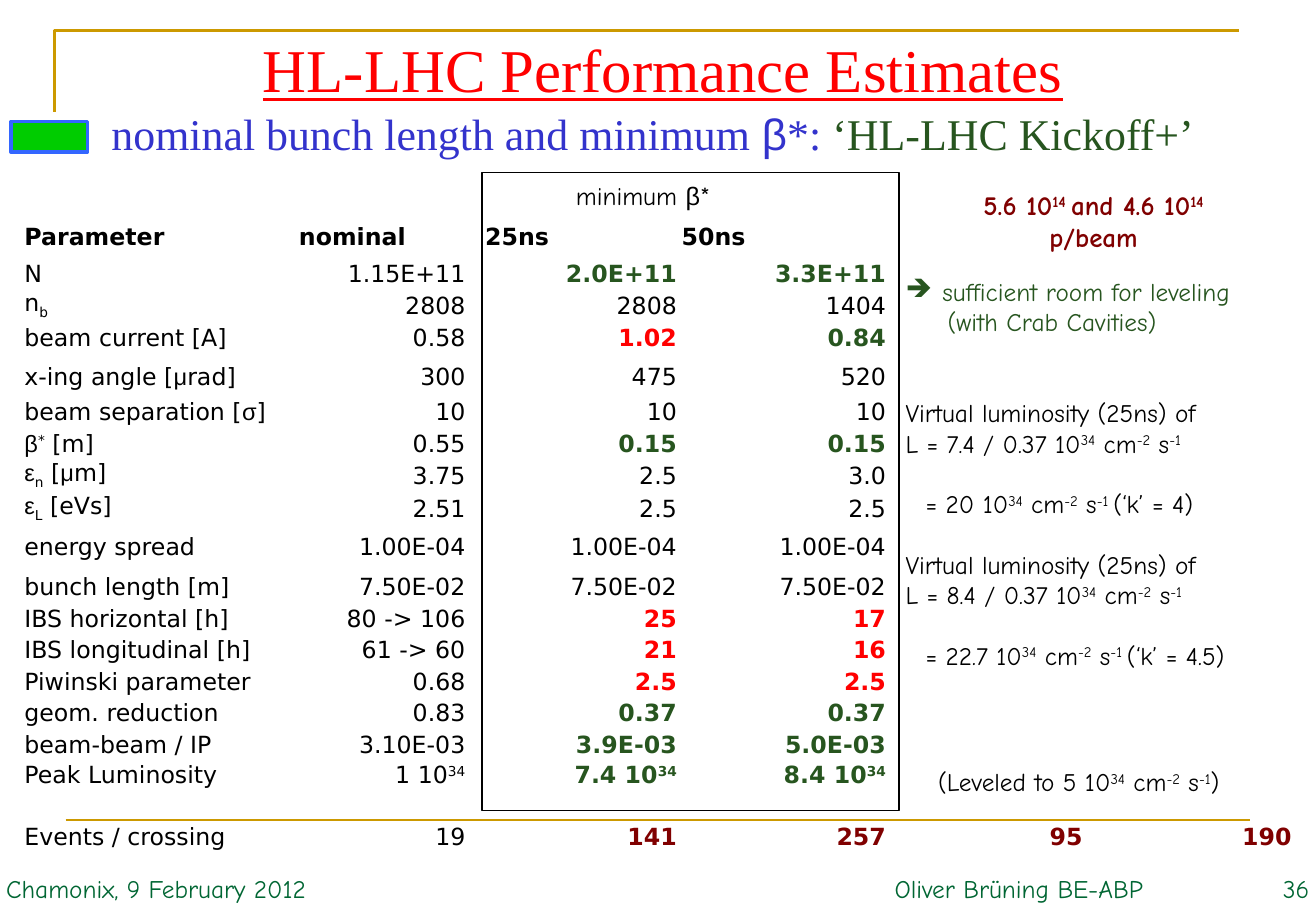
from itertools import groupby

from lxml import etree
from pptx import Presentation
from pptx.dml.color import RGBColor
from pptx.enum.shapes import MSO_CONNECTOR, MSO_SHAPE
from pptx.enum.text import MSO_ANCHOR, PP_ALIGN
from pptx.oxml.ns import qn
from pptx.util import Cm, Pt

LEFT, CENTER, RIGHT = PP_ALIGN.LEFT, PP_ALIGN.CENTER, PP_ALIGN.RIGHT
MIDDLE, BOTTOM = MSO_ANCHOR.MIDDLE, MSO_ANCHOR.BOTTOM
RECTANGLE, STRAIGHT = MSO_SHAPE.RECTANGLE, MSO_CONNECTOR.STRAIGHT

COLOURS = {
    "black": "000000", "red": "FF0000", "green": "27551F", "maroon": "800000",
    "gold": "CC9900", "blue": "3333CC", "footer": "006633",
    "marker": "00CC00", "marker edge": "3366FF",
}
SERIF, HAND, TABLE_FONT, GREEK_FONT = "Times New Roman", "Comic Neue", "DejaVu Sans", "Arial"
GREEK = "βεμσ"
BASELINES = {"^": "30000", "_": "-25000"}
NO_STYLE_NO_GRID = "{2D5ABB26-0587-4C30-8999-92F81FD0307C}"

TABLE_LEFT = 0.46
COLUMNS = [5.74, 3.58, 4.42, 4.37, 4.11, 4.37]
HEADER = ["Parameter", "nominal", "25ns", "50ns"]
BLACK, RED, GREEN = ["black"] * 4, ["black"] * 2 + ["red"] * 2, ["black"] * 2 + ["green"] * 2
# Row height, cell colours, cell texts
PARAMETERS = [
    (0.76, GREEN, ["N", "1.15E+11", "2.0E+11", "3.3E+11"]),
    (0.66, BLACK, ["n|_b", "2808", "2808", "1404"]),
    (0.66, ["black", "black", "red", "green"], ["beam current [A]", "0.58", "1.02", "0.84"]),
    (0.81, BLACK, ["x-ing angle [μrad]", "300", "475", "520"]),
    (0.74, BLACK, ["beam separation [σ]", "10", "10", "10"]),
    (0.66, GREEN, ["β|^*| [m]", "0.55", "0.15", "0.15"]),
    (0.66, BLACK, ["ε|_n| [μm]", "3.75", "2.5", "3.0"]),
    (0.66, BLACK, ["ε|_L| [eVs]", "2.51", "2.5", "2.5"]),
    (0.79, BLACK, ["energy spread"] + ["1.00E-04"] * 3),
    (0.84, BLACK, ["bunch length [m]"] + ["7.50E-02"] * 3),
    (0.66, RED, ["IBS horizontal [h]", "80 -> 106", "25", "17"]),
    (0.66, RED, ["IBS longitudinal [h]", "61 -> 60", "21", "16"]),
    (0.66, RED, ["Piwinski parameter", "0.68", "2.5", "2.5"]),
    (0.66, GREEN, ["geom. reduction", "0.83", "0.37", "0.37"]),
    (0.66, GREEN, ["beam-beam / IP", "3.10E-03", "3.9E-03", "5.0E-03"]),
    (0.64, GREEN, ["Peak Luminosity", "1 10|^34", "7.4 10|^34", "8.4 10|^34"]),
]
EVENTS = ["Events / crossing", "19", "141", "257", "95", "190"]
EVENT_COLOURS = ["black"] * 2 + ["maroon"] * 4

UNITS = "10|^34| cm|^-2| s|^-1"
# Space before in points, indent in cm, colour, text
NOTES = [
    (0, 0.77, "green", "sufficient room for leveling"),
    (0, 0.88, "green", "(with Crab Cavities)"),
    (36, 0, "black", "Virtual luminosity (25ns) of"),
    (0, 0, "black", "L = 7.4 / 0.37 " + UNITS),
    (18, 0.42, "black", "= 20 " + UNITS + " |(‘k’ = 4)"),
    (18, 0, "black", "Virtual luminosity (25ns) of"),
    (0, 0, "black", "L = 8.4 / 0.37 " + UNITS),
    (18, 0.42, "black", "= 22.7 " + UNITS + " |(‘k’ = 4.5)"),
]


def rgb(name):
    return RGBColor.from_string(COLOURS[name])


def write(paragraph, text, size, font, colour, bold=False):
    """Append text; "|" splits segments, and a leading ^ or _ raises or lowers one."""
    for segment in text.split("|"):
        baseline = BASELINES.get(segment[0])
        segment = segment[1:] if baseline else segment
        for is_greek, letters in groupby(segment, key=lambda letter: letter in GREEK):
            run = paragraph.add_run()
            run.text = "".join(letters)
            run.font.size = Pt(size)
            run.font.name = GREEK_FONT if is_greek else font
            run.font.bold = bold
            run.font.color.rgb = rgb(colour)
            if baseline:
                run.font._element.set("baseline", baseline)


def set_margins(target, horizontal, top, bottom):
    target.margin_left = target.margin_right = Cm(horizontal)
    target.margin_top, target.margin_bottom = Cm(top), Cm(bottom)


def add_text_frame(slide, left, top, width, height, margins=(0.13, 0.05)):
    shape = slide.shapes.add_textbox(Cm(left), Cm(top), Cm(width), Cm(height))
    text_frame = shape.text_frame
    text_frame.word_wrap = True
    set_margins(text_frame, margins[0], margins[1], margins[1])
    return text_frame


def add_label(slide, left, top, width, text, colour, align=LEFT):
    paragraph = add_text_frame(slide, left, top, width, 0.74).paragraphs[0]
    paragraph.alignment = align
    write(paragraph, text, 15, HAND, colour)


def add_box(slide, left, top, width, height, line, line_width, fill=None):
    shape = slide.shapes.add_shape(RECTANGLE, Cm(left), Cm(top), Cm(width), Cm(height))
    shape.shadow.inherit = False
    shape.line.color.rgb = rgb(line)
    shape.line.width = Pt(line_width)
    if fill:
        shape.fill.solid()
        shape.fill.fore_color.rgb = rgb(fill)
    else:
        shape.fill.background()


def add_frame_lines(slide):
    builder = slide.shapes.build_freeform(Cm(1.14), Cm(2.34))
    builder.add_line_segments([(Cm(1.14), Cm(0.64)), (Cm(25.91), Cm(0.64))], close=False)
    corner = builder.convert_to_shape()
    corner.shadow.inherit = False
    corner.fill.background()
    rule = slide.shapes.add_connector(STRAIGHT, Cm(1.37), Cm(17.15), Cm(26.14), Cm(17.15))
    etree.SubElement(rule._element.spPr, qn("a:effectLst"))
    for shape in (corner, rule):
        shape.line.color.rgb = rgb("gold")
        shape.line.width = Pt(1.5)


def add_plain_table(slide, top, columns, heights):
    table = slide.shapes.add_table(
        len(heights), len(columns), Cm(TABLE_LEFT), Cm(top), Cm(sum(columns)), Cm(sum(heights))
    ).table
    table.first_row = table.horz_banding = False
    table._tbl.tblPr.find(qn("a:tableStyleId")).text = NO_STYLE_NO_GRID
    for column, width in zip(table.columns, columns):
        column.width = Cm(width)
    for row, height in zip(table.rows, heights):
        row.height = Cm(height)
    return table


def fill_row(row, texts, colours, header=False):
    for index, (cell, text, colour) in enumerate(zip(row.cells, texts, colours)):
        cell.fill.background()
        cell.vertical_anchor = BOTTOM
        set_margins(cell, 0.05, 0.03, 0)
        paragraph = cell.text_frame.paragraphs[0]
        paragraph.alignment = LEFT if header or index == 0 else RIGHT
        write(paragraph, text, 14, TABLE_FONT, colour, header or colour != "black")


def add_parameter_table(slide):
    heights = [1.12] + [height for height, _, _ in PARAMETERS]
    table = add_plain_table(slide, 4.14, COLUMNS[:4], heights)
    fill_row(table.rows[0], HEADER, BLACK, header=True)
    table.cell(0, 2).margin_left = Cm(0.36)
    for index, (_, colours, texts) in enumerate(PARAMETERS, 1):
        fill_row(table.rows[index], texts, colours)


def add_paragraph(text_frame, index):
    return text_frame.add_paragraph() if index else text_frame.paragraphs[0]


def add_notes_column(slide):
    text_frame = add_text_frame(slide, 18.8, 5.72, 8.71, 8.64)
    for index, (space, indent, colour, text) in enumerate(NOTES):
        paragraph = add_paragraph(text_frame, index)
        properties = paragraph._p.get_or_add_pPr()
        properties.set("marL", str(Cm(indent)))
        if index == 0:
            properties.set("indent", str(-Cm(indent)))
            etree.SubElement(properties, qn("a:buChar"), char="➔")
        if space:
            paragraph.space_before = Pt(space)
        write(paragraph, text, 15, HAND, colour)


def add_beam_intensity(slide):
    text_frame = add_text_frame(slide, 19.61, 3.81, 6.5, 1.63, margins=(0.25, 0.13))
    for index, text in enumerate(["5.6 10|^14 |and 4.6 10|^14", "p/beam"]):
        paragraph = add_paragraph(text_frame, index)
        paragraph.alignment = CENTER
        write(paragraph, text, 16, HAND, "maroon", bold=True)


def format_title(title):
    title.left, title.top, title.width, title.height = Cm(1.47), Cm(0.43), Cm(24.77), Cm(2.01)
    title.text_frame.text = "HL-LHC Performance Estimates"
    title.text_frame.vertical_anchor = MIDDLE
    paragraph = title.text_frame.paragraphs[0]
    paragraph.alignment = CENTER
    font = paragraph.runs[0].font
    font.name, font.size, font.underline = SERIF, Pt(36), True
    font.color.rgb = rgb("red")


def add_subtitle(slide):
    add_box(slide, 0.23, 2.54, 1.6, 0.64, "marker edge", 2, fill="marker")
    text_frame = add_text_frame(slide, 2.08, 2.11, 23.62, 1.37, margins=(0.25, 0.13))
    paragraph = text_frame.paragraphs[0]
    write(paragraph, "nominal bunch length and minimum β*: ", 26, SERIF, "blue")
    write(paragraph, "‘HL-LHC Kickoff+’", 26, SERIF, "green")


def main():
    presentation = Presentation()
    presentation.slide_width, presentation.slide_height = Cm(27.51), Cm(19.05)
    slide = presentation.slides.add_slide(presentation.slide_layouts[5])
    add_frame_lines(slide)
    format_title(slide.shapes.title)
    add_parameter_table(slide)
    add_label(slide, 11.91, 3.71, 6.43, "minimum β*", "black")
    add_label(slide, 19.48, 15.98, 7.34, "(Leveled to 5 " + UNITS + "|)", "black")
    add_box(slide, 10.08, 3.61, 8.71, 13.34, "black", 1)
    add_subtitle(slide)
    events = add_plain_table(slide, 17.15, COLUMNS, [0.64])
    fill_row(events.rows[0], EVENTS, EVENT_COLOURS)
    add_beam_intensity(slide)
    add_notes_column(slide)
    add_label(slide, 0, 18.21, 14.96, "Chamonix, 9 February 2012", "footer")
    add_label(slide, 18.57, 18.21, 6.65, "Oliver Brüning BE-ABP", "footer")
    add_label(slide, 17.42, 18.21, 10.08, "36", "footer", RIGHT)
    presentation.save("out.pptx")


if __name__ == "__main__":
    main()
